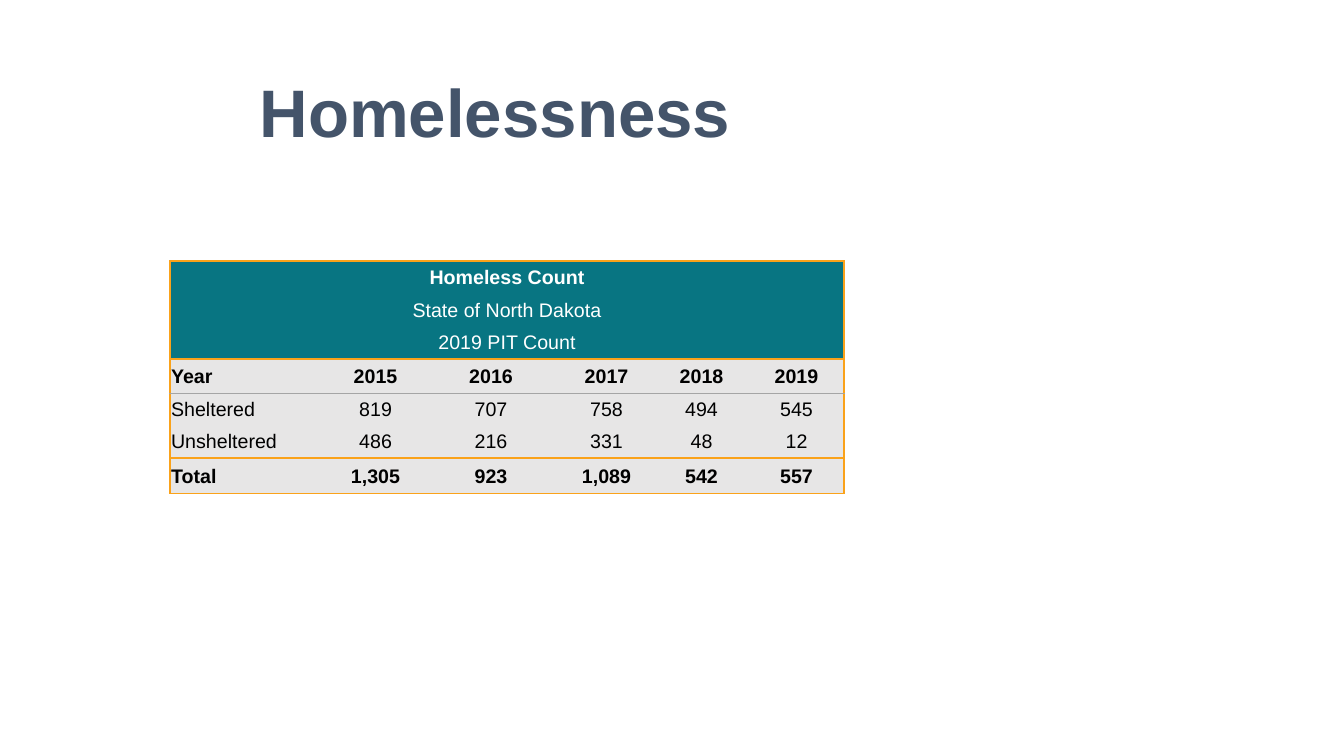
import pptx
import pptx.dml.color
import pptx.enum.text
import pptx.util
from lxml import etree
from pptx.oxml.ns import qn

PX = 9071  # EMU in one px, at 100.8 px to the inch
COLORS = {"title": "44546A", "teal": "087582", "grey": "E7E6E6", "rule": "A5A5A5",
          "orange": "FAA21A", "white": "FFFFFF", "black": "000000"}
ALIGN = pptx.enum.text.PP_ALIGN
ANCHOR = pptx.enum.text.MSO_ANCHOR

HEADINGS = ["Homeless Count", "State of North Dakota", "2019 PIT Count"]
COUNTS = [
    ["Year", "2015", "2016", "2017", "2018", "2019"],
    ["Sheltered", "819", "707", "758", "494", "545"],
    ["Unsheltered", "486", "216", "331", "48", "12"],
    ["Total", "1,305", "923", "1,089", "542", "557"],
]
COL_WIDTHS = [158, 95, 136, 95, 95, 95]
ROW_HEIGHTS = [33, 32, 33, 34, 32, 33, 36]
BOLD_ROWS = {"Homeless Count", "Year", "Total"}
EDGE = ("orange", 1)
# Horizontal rules from the top of the table to its bottom
ROW_RULES = [EDGE, None, None, EDGE, ("rule", 0.5), None, ("orange", 2), EDGE]


def px(n):
    return pptx.util.Emu(n * PX)


def rgb(name):
    return pptx.dml.color.RGBColor.from_string(COLORS[name])


class Deck:
    def __init__(self, font="Arial"):
        self.font = font
        self.prs = pptx.Presentation()
        self.prs.slide_width = pptx.util.Inches(13.33)
        self.prs.slide_height = pptx.util.Inches(7.5)
        self.slide = self.prs.slides.add_slide(self.prs.slide_layouts[6])

    def set_text(self, tf, text, size, color, bold=False, align=ALIGN.CENTER):
        p = tf.paragraphs[0]
        p.text, p.alignment = text, align
        p.font.name, p.font.size, p.font.bold = self.font, pptx.util.Pt(size), bold
        p.font.color.rgb = rgb(color)

    def title(self, text, x, y, w, h, top_inset):
        tf = self.slide.shapes.add_textbox(px(x), px(y), px(w), px(h)).text_frame
        tf.word_wrap = True
        tf.margin_top = px(top_inset)
        self.set_text(tf, text, 48, "title", bold=True)

    def borders(self, cell, **sides):
        """Draw each side as (colour, points), or clear it where it is None."""
        tcPr = cell._tc.get_or_add_tcPr()
        for side in "LRTB":
            ln = etree.SubElement(tcPr, qn("a:ln" + side))
            if sides[side] is None:
                etree.SubElement(ln, qn("a:noFill"))
                continue
            color, points = sides[side]
            ln.set("w", str(pptx.util.Pt(points)))
            fill = etree.SubElement(ln, qn("a:solidFill"))
            etree.SubElement(fill, qn("a:srgbClr"), val=COLORS[color])

    def cell(self, cell, text, fill, color, bold, align):
        cell.fill.solid()
        cell.fill.fore_color.rgb = rgb(fill)
        cell.vertical_anchor = ANCHOR.MIDDLE
        cell.margin_left = cell.margin_right = cell.margin_top = px(1)
        cell.margin_bottom = 0
        self.set_text(cell.text_frame, text, 14, color, bold, align)

    def count_table(self, x, y):
        rows = [[h] + [""] * (len(COL_WIDTHS) - 1) for h in HEADINGS] + COUNTS
        last = len(COL_WIDTHS) - 1
        table = self.slide.shapes.add_table(
            len(rows), len(COL_WIDTHS), px(x), px(y),
            px(sum(COL_WIDTHS)), px(sum(ROW_HEIGHTS))).table
        table.first_row = table.horz_banding = False
        for col, width in zip(table.columns, COL_WIDTHS):
            col.width = px(width)
        for i, row in enumerate(rows):
            table.rows[i].height = px(ROW_HEIGHTS[i])
            heading = i < len(HEADINGS)
            fill, color = ("teal", "white") if heading else ("grey", "black")
            for j, text in enumerate(row):
                cell = table.cell(i, j)
                self.borders(cell, L=EDGE if j == 0 else None,
                             R=EDGE if j == last or heading and j == 0 else None,
                             T=ROW_RULES[i], B=ROW_RULES[i + 1])
                align = ALIGN.CENTER if heading or j else ALIGN.LEFT
                self.cell(cell, text, fill, color, row[0] in BOLD_ROWS, align)
            if heading:
                table.cell(i, 0).merge(table.cell(i, last))


def main():
    deck = Deck()
    deck.title("Homelessness", 28, 33, 934, 701, top_inset=37)
    deck.count_table(170, 261)
    deck.prs.save("out.pptx")


if __name__ == "__main__":
    main()
